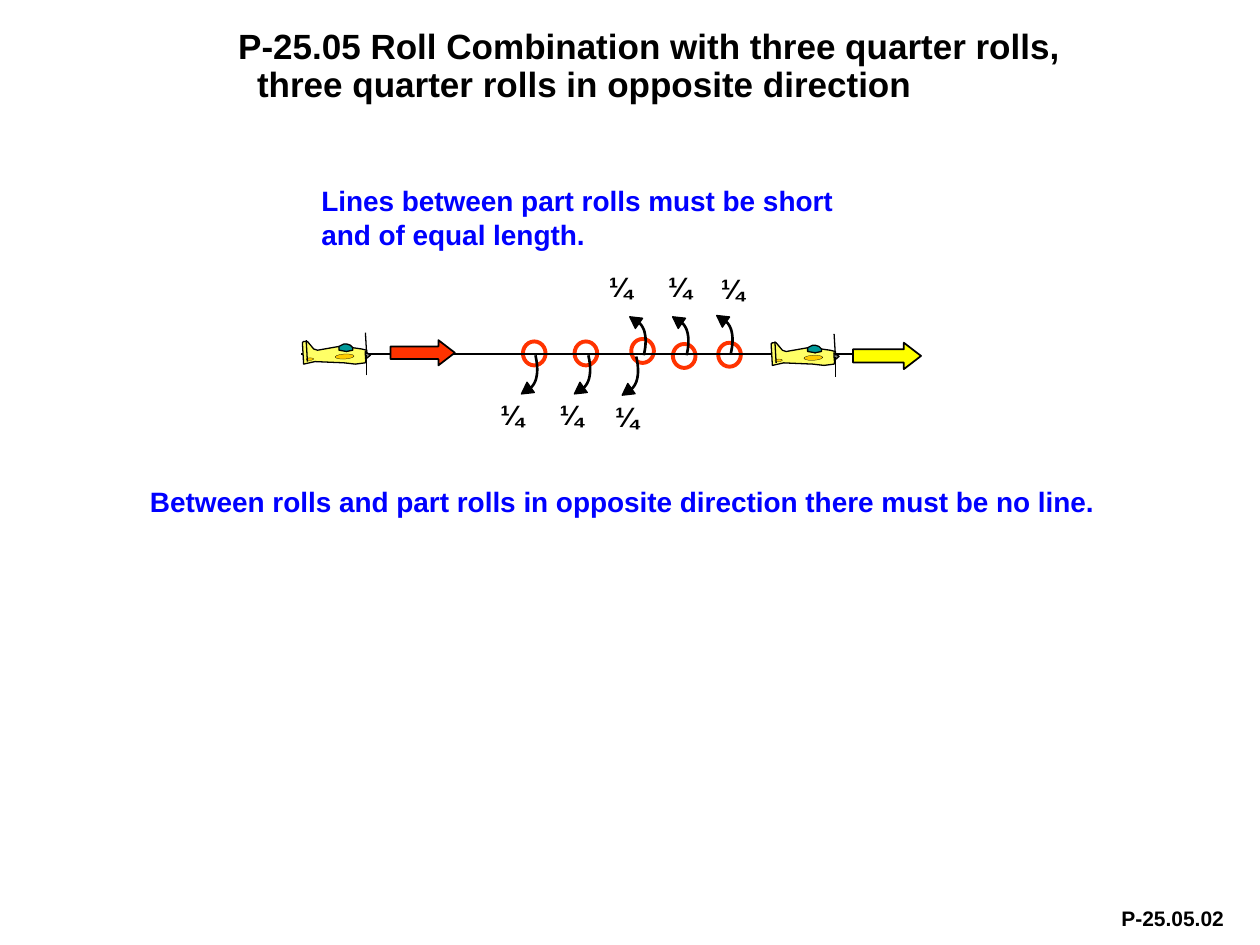
from lxml.etree import SubElement
from pptx import Presentation
from pptx.dml.color import RGBColor
from pptx.enum.shapes import MSO_CONNECTOR, MSO_SHAPE
from pptx.enum.text import MSO_ANCHOR, MSO_AUTO_SIZE, PP_ALIGN
from pptx.oxml.ns import qn
from pptx.util import Inches, Pt

INK = {
    "black": "000000", "blue": "0000FF", "red": "FF3300", "yellow": "FFFF00",
    "body": "FFFF66", "glass": "009999", "gold": "FFCC00", "nose": "808080",
}


def write(box, words, size=16, ink="black", align=PP_ALIGN.LEFT, pad=0.05, lead=1.0):
    frame = box.text_frame
    frame.word_wrap = True
    frame.auto_size = MSO_AUTO_SIZE.NONE
    frame.vertical_anchor = MSO_ANCHOR.TOP
    frame.margin_left = frame.margin_right = Inches(0.09)
    frame.margin_top = frame.margin_bottom = Inches(pad)
    par = frame.paragraphs[0]
    par.text = words
    par.alignment = align
    par.line_spacing = lead
    font = par.font
    font.name, font.size, font.bold = "Arial", Pt(size), True
    font.color.rgb = RGBColor.from_string(INK[ink])
    return par


def paint(shape, line="black", width=0.75, fill=None):
    shape.line.color.rgb = RGBColor.from_string(INK[line])
    shape.line.width = Pt(width)
    if fill:
        shape.fill.solid()
        shape.fill.fore_color.rgb = RGBColor.from_string(INK[fill])
    elif hasattr(shape, "fill"):
        shape.fill.background()
    SubElement(shape._element.spPr, qn("a:effectLst"))


deck = Presentation()
deck.slide_width, deck.slide_height = Inches(10), Inches(7.5)
slide = deck.slides.add_slide(deck.slide_layouts[5])
shapes = slide.shapes

# Title with a hanging second line
title = shapes.title
title.left, title.top = Inches(1.8), Inches(0.19)
title.width, title.height = Inches(6.79), Inches(0.69)
par = write(title, "P-25.05 Roll Combination with three quarter rolls, "
            "three quarter rolls in opposite direction", size=20, pad=0.04, lead=0.9)
props = par._p.get_or_add_pPr()
props.set("marL", str(Inches(0.15)))
props.set("indent", str(-Inches(0.15)))

# Notes and page code
notes = [
    ("Lines between part rolls must be short\vand of equal length.",
     2.46, 1.41, 4.54, 0.64, 16, "blue"),
    ("Between rolls and part rolls in opposite direction there must be no line.",
     1.1, 3.8, 7.79, 0.37, 16, "blue"),
    ("P-25.05.02", 8.81, 7.14, 1.03, 0.3, 12, "black"),
]
for words, x, y, wide, high, size, ink in notes:
    box = shapes.add_textbox(Inches(x), Inches(y), Inches(wide), Inches(high))
    write(box, words, size=size, ink=ink)

# Roll fractions, centred on x
for x, y in [(4.06, 3.11), (4.53, 3.11), (4.97, 3.12),
             (4.92, 2.09), (5.39, 2.09), (5.81, 2.11)]:
    box = shapes.add_textbox(Inches(x - 0.63), Inches(y), Inches(1.27), Inches(0.64))
    write(box, "¼", align=PP_ALIGN.CENTER)

# Roll rings
for x, y in [(4.15, 2.71), (4.56, 2.71), (5.01, 2.69), (5.34, 2.73), (5.7, 2.72)]:
    ring = shapes.add_shape(MSO_SHAPE.OVAL, Inches(x), Inches(y), Inches(0.18), Inches(0.19))
    paint(ring, "red", 2.25)

# Flight line
track = shapes.add_connector(MSO_CONNECTOR.STRAIGHT, Inches(7.12), Inches(2.81),
                             Inches(2.39), Inches(2.81))
paint(track, width=1)

# Aeroplanes: each part is placed from the tail's top left corner
hull = [(0.4, 0.07), (0.47, 0.08), (0.51, 0.09), (0.51, 0.14), (0.5, 0.19),
        (0.42, 0.2), (0.33, 0.19), (0.1, 0.18), (0.01, 0.2), (0, 0.03),
        (0.01, 0.02), (0.04, 0.02), (0.09, 0.08), (0.12, 0.09), (0.29, 0.06),
        (0.3, 0.08), (0.35, 0.1), (0.39, 0.08)]
glass = [(0.29, 0.06), (0.29, 0.09), (0.35, 0.1), (0.4, 0.09), (0.4, 0.07),
         (0.38, 0.05), (0.35, 0.04), (0.33, 0.04)]
for left, top in [(2.4, 2.69), (6.12, 2.7)]:
    plane = shapes.add_group_shape().shapes
    for dots, fill in [(hull, "body"), (glass, "glass")]:
        spots = [(Inches(left + x), Inches(top + y)) for x, y in dots]
        pen = plane.build_freeform(*spots[0])
        pen.add_line_segments(spots[1:], close=True)
        paint(pen.convert_to_shape(), fill=fill)
    for kind, x, y, wide, high, turn, fill, width in [
            (MSO_SHAPE.OVAL, 0.26, 0.12, 0.15, 0.04, -3, "gold", 0.13),
            (MSO_SHAPE.OVAL, 0.03, 0.15, 0.06, 0.02, -3, "gold", 0.13),
            (MSO_SHAPE.ISOSCELES_TRIANGLE, 0.49, 0.11, 0.06, 0.04, 87, "nose", 0.75)]:
        part = plane.add_shape(kind, Inches(left + x), Inches(top + y),
                               Inches(wide), Inches(high))
        part.rotation = turn
        paint(part, width=width, fill=fill)
    for x, y, end, low in [(0.04, 0.18, 0.03, 0.01), (0.51, 0.29, 0.51, 0.13),
                           (0.51, 0.12, 0.5, -0.05)]:
        rod = plane.add_connector(MSO_CONNECTOR.STRAIGHT, Inches(left + x), Inches(top + y),
                                  Inches(left + end), Inches(top + low))
        paint(rod)

# Curved roll arrows: way is -1 for up, 1 for down
steps = [n / 12 for n in range(13)]
curve = [(0.09 * t * (1 - t) ** 2 + 0.03 * t ** 2 * (1 - t) - 0.04 * t ** 3,
          0.39 * t * (1 - t) ** 2 + 0.66 * t ** 2 * (1 - t) + 0.26 * t ** 3)
         for t in steps]
for x, y, way in [(4.25, 2.82, 1), (4.67, 2.82, 1), (5.05, 2.83, 1),
                  (5.11, 2.82, -1), (5.45, 2.82, -1), (5.8, 2.81, -1)]:
    arrow = shapes.add_group_shape().shapes
    spots = [(Inches(x + dx), Inches(y + way * dy)) for dx, dy in curve]
    pen = arrow.build_freeform(*spots[0])
    pen.add_line_segments(spots[1:], close=False)
    paint(pen.convert_to_shape(), width=1.5)
    tip = arrow.add_shape(MSO_SHAPE.ISOSCELES_TRIANGLE, Inches(x - 0.125),
                          Inches(y + way * 0.28 - 0.045), Inches(0.1), Inches(0.09))
    tip.rotation = 270 - way * 35.5
    paint(tip, fill="black")

# Direction arrows
for x, y, wide, high, fill in [(3.1, 2.7, 0.51, 0.2, "red"), (6.77, 2.72, 0.54, 0.21, "yellow")]:
    arrow = shapes.add_shape(MSO_SHAPE.RIGHT_ARROW, Inches(x), Inches(y),
                             Inches(wide), Inches(high))
    arrow.adjustments[1] = 0.65
    paint(arrow, width=1, fill=fill)

deck.save("out.pptx")
